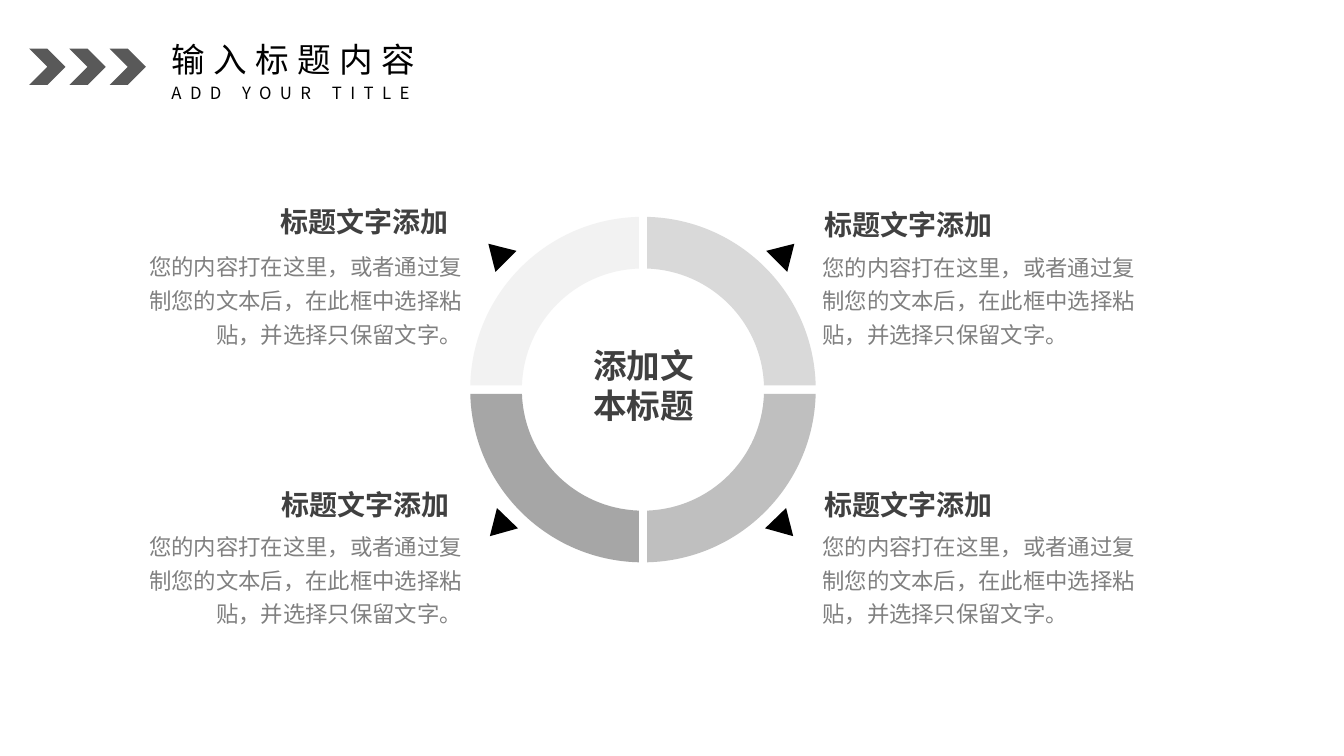
import math

import pptx
import pptx.dml.color
import pptx.enum.shapes
import pptx.enum.text
import pptx.oxml
import pptx.oxml.ns
import pptx.util

Pt = pptx.util.Pt
qn = pptx.oxml.ns.qn
ALIGN = pptx.enum.text.PP_ALIGN
JP = "Noto Sans CJK JP"
SC = "Noto Sans CJK SC"

RING_CENTRE = (459.3, 278.3)
OUTER_RADIUS, INNER_RADIUS, HALF_GAP = 123.4, 86.5, 3
POINTER_SIZE = 20.1

HEADING = "标题文字添加"
BODY = "您的内容打在这里，或者通过复制您的文本后，在此框中选择粘贴，并选择只保留文字。"

# Direction from the centre, ring colour, pointer corner, heading box, body box
QUADRANTS = [
    ((-1, -1), "F2F2F2", (348.8, 174.1), (117.7, 139, 208, 33.8), (89.5, 173.9, 245.5, 77.4)),
    ((1, -1), "D9D9D9", (567.4, 174.1), (583.9, 141.1, 208, 31.7), (582.5, 174.2, 247, 77)),
    ((-1, 1), "A6A6A6", (349.9, 383), (118.1, 341.3, 208, 31.7), (89.5, 373.7, 245.5, 77.4)),
    ((1, 1), "BFBFBF", (566.6, 383), (583.9, 341.3, 208, 31.7), (582.5, 373.7, 247, 77)),
]


def colour(code):
    return pptx.dml.color.RGBColor.from_string(code)


def paint(shape, fill):
    shape.fill.solid()
    shape.fill.fore_color.rgb = colour(fill)
    shape.line.fill.background()
    shape.shadow.inherit = False


def add_text(page, place, lines, size=16, ink="000000", font=JP, bold=False,
             align=ALIGN.LEFT, spacing=None, tracking=0, insets=(5, 2.4)):
    """Each line is a string, or a list of (words, font) pairs."""
    box = page.shapes.add_textbox(*map(Pt, place))
    frame = box.text_frame
    frame.word_wrap = True
    frame.auto_size = pptx.enum.text.MSO_AUTO_SIZE.SHAPE_TO_FIT_TEXT
    frame.margin_left = frame.margin_right = Pt(insets[0])
    frame.margin_top = frame.margin_bottom = Pt(insets[1])
    for index, line in enumerate(lines):
        para = frame.add_paragraph() if index else frame.paragraphs[0]
        para.alignment = align
        if spacing:
            para.line_spacing = spacing
        for words, face in [(line, font)] if isinstance(line, str) else line:
            span = para.add_run()
            span.text = words
            span.font.size = Pt(size)
            span.font.bold = bold
            span.font.color.rgb = colour(ink)
            span.font.name = face
            properties = span.font._element
            if tracking:
                properties.set("spc", str(tracking * 100))
            # Chinese glyphs take the East Asian font
            east_asian = pptx.oxml.parse_xml(
                f'<a:ea {pptx.oxml.ns.nsdecls("a")} typeface="{face}"/>')
            properties.find(qn("a:latin")).addnext(east_asian)


def add_outline(page, points, fill):
    corners = [(Pt(x), Pt(y)) for x, y in points]
    builder = page.shapes.build_freeform(*corners[0], scale=1.0)
    builder.add_line_segments(corners[1:], close=True)
    shape = builder.convert_to_shape()
    paint(shape, fill)
    return shape


def bend(shape, segment, controls):
    """Turn a straight segment of the outline into a Bezier curve."""
    segment.tag = qn("a:cubicBezTo")
    for index, (x, y) in enumerate(controls):
        point = segment.makeelement(qn("a:pt"), {
            "x": str(Pt(x) - shape.left), "y": str(Pt(y) - shape.top)})
        segment.insert(index, point)


def add_chevron(page, left):
    shape = page.shapes.add_shape(
        pptx.enum.shapes.MSO_SHAPE.CHEVRON, Pt(left), Pt(34.8), Pt(25.9), Pt(25.9))
    paint(shape, "595959")


def arc(radius, direction):
    """Start, two control points and end of a quarter arc trimmed by the gap."""
    trim = math.asin(HALF_GAP / radius)
    sweep = math.pi / 2 - 2 * trim
    far = radius * math.cos(trim)
    reach = 4 / 3 * math.tan(sweep / 4)
    # Control points lie on the tangents at the two ends
    inward, along = far - reach * HALF_GAP, HALF_GAP + reach * far
    offsets = [(far, HALF_GAP), (inward, along), (along, inward), (HALF_GAP, far)]
    return [(RING_CENTRE[0] + direction[0] * x, RING_CENTRE[1] + direction[1] * y)
            for x, y in offsets]


def add_ring_segment(page, direction, fill):
    outer = arc(OUTER_RADIUS, direction)
    inner = arc(INNER_RADIUS, direction)[::-1]
    shape = add_outline(page, [outer[0], outer[3], inner[0], inner[3]], fill)
    sides = list(shape._element.iter(qn("a:lnTo")))
    bend(shape, sides[0], outer[1:3])
    bend(shape, sides[2], inner[1:3])


def add_pointer(page, direction, corner):
    across, down = direction
    if down < 0:
        offsets = [(0, 0), (5.1, POINTER_SIZE), (POINTER_SIZE, 5.1)]
    else:
        offsets = [(5.1, 0), (0, POINTER_SIZE), (POINTER_SIZE, 14.5)]
    add_outline(page, [(corner[0] - across * x, corner[1] - (POINTER_SIZE if down > 0 else 0) + y)
                       for x, y in offsets], "000000")


def main():
    deck = pptx.Presentation()
    deck.slide_width, deck.slide_height = Pt(960), Pt(540)
    page = deck.slides.add_slide(deck.slide_layouts[6])

    # Title with its chevrons
    for index in range(3):
        add_chevron(page, 20.9 + index * 28.7)
    add_text(page, (115.4, 55.4, 272, 21.6), [[("ADD YOUR ", SC), ("TITLE", JP)]],
             size=12, tracking=6, insets=(7.2, 3.6))
    add_text(page, (115.4, 24.5, 262, 36), ["输入标题内容"],
             size=24, tracking=6, insets=(7.2, 3.6))

    # Pointers, centre label, then the texts and ring of each quadrant
    for direction, _, corner, _, _ in QUADRANTS:
        add_pointer(page, direction, corner)
    add_text(page, (397.4, 244.1, 124.6, 62.6), ["添加文", "本标题"], size=24,
             ink="404040", bold=True, align=ALIGN.CENTER)
    for direction, fill, _, heading_place, body_place in QUADRANTS:
        align = ALIGN.RIGHT if direction[0] < 0 else ALIGN.LEFT
        add_text(page, heading_place, [HEADING], size=20, ink="404040",
                 bold=True, align=align, spacing=1.2)
        add_text(page, body_place, [BODY], ink="808080", align=align, spacing=1.25)
        add_ring_segment(page, direction, fill)

    deck.save("out.pptx")


if __name__ == "__main__":
    main()
